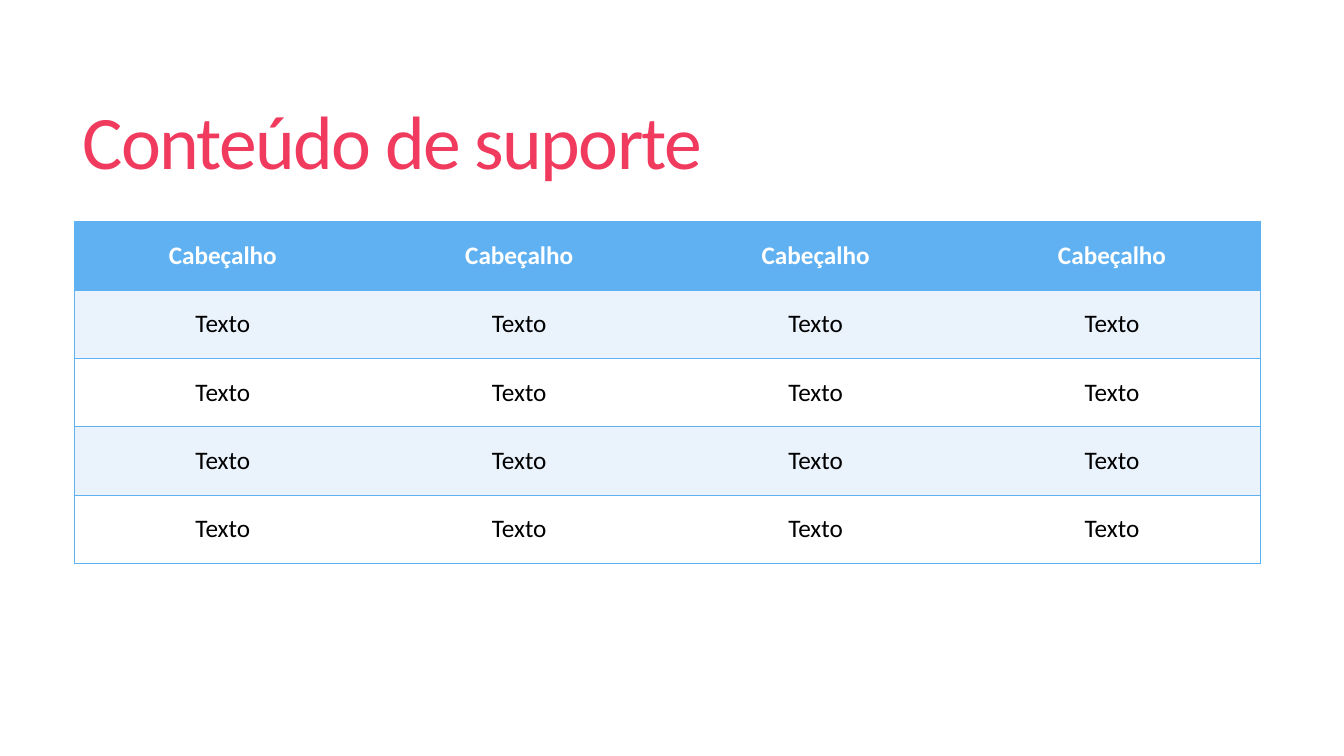
from pptx import Presentation
from pptx.dml.color import RGBColor as Rgb
from pptx.enum.text import MSO_ANCHOR as Anchor, PP_ALIGN as Align
from pptx.oxml.ns import qn
from pptx.util import Inches, Pt
from lxml.etree import SubElement as Sub

COLORS = {
    "title": "F03B5E",
    "head": "60B1F2",
    "band": "EAF2FC",
    "white": "FFFFFF",
    "text": "000000",
}
FONT = "Calibri"
COLS = 4
ROWS = [["Cabeçalho"] * COLS] + [["Texto"] * COLS for _ in range(4)]


def add_run(para, text, size, color, bold=False):
    run = para.add_run()
    run.text = text
    font = run.font
    font.name, font.size, font.bold = FONT, Pt(size), bold
    font.color.rgb = Rgb.from_string(COLORS[color])
    return run


def add_edge(cell, side, color):
    props = cell._tc.get_or_add_tcPr()
    line = Sub(props, qn(f"a:ln{side}"), w=str(Pt(1)))
    if color:
        fill = Sub(line, qn("a:solidFill"))
        Sub(fill, qn("a:srgbClr"), val=COLORS[color])
    else:
        Sub(line, qn("a:noFill"))


def add_title(slide, box, text):
    title = slide.shapes.title
    title.left, title.top, title.width, title.height = map(Inches, box)
    frame = title.text_frame
    frame.word_wrap = True
    frame.vertical_anchor = Anchor.MIDDLE
    para = frame.paragraphs[0]
    para.alignment = Align.LEFT
    para.line_spacing = 0.85
    run = add_run(para, text, 54, "title")
    run.font._element.set("spc", "-120")


def style_cell(cell, text, row, col):
    edges = {
        "L": "head" if col == 0 else None,
        "R": "head" if col == COLS - 1 else None,
        "T": "head",
        "B": "head",
    }
    for side, color in edges.items():
        add_edge(cell, side, color)
    shade = "head" if row == 0 else "band" if row % 2 else "white"
    cell.fill.solid()
    cell.fill.fore_color.rgb = Rgb.from_string(COLORS[shade])
    cell.vertical_anchor = Anchor.MIDDLE
    para = cell.text_frame.paragraphs[0]
    para.alignment = Align.CENTER
    add_run(para, text, 18, "white" if row == 0 else "text", row == 0)


def add_grid(slide, box, rows):
    left, top, width, height = map(Inches, box)
    grid = slide.shapes.add_table(len(rows), COLS, left, top, width, height).table
    grid.horz_banding = False
    for row, texts in enumerate(rows):
        for col, text in enumerate(texts):
            style_cell(grid.cell(row, col), text, row, col)


def main():
    deck = Presentation()
    deck.slide_width, deck.slide_height = Inches(13.33), Inches(7.5)
    slide = deck.slides.add_slide(deck.slide_layouts[5])
    add_title(slide, (0.72, 0.55, 11.78, 1.81), "Conteúdo de suporte")
    add_grid(slide, (0.74, 2.2, 11.76, 3.39), ROWS)
    deck.save("out.pptx")


if __name__ == "__main__":
    main()
